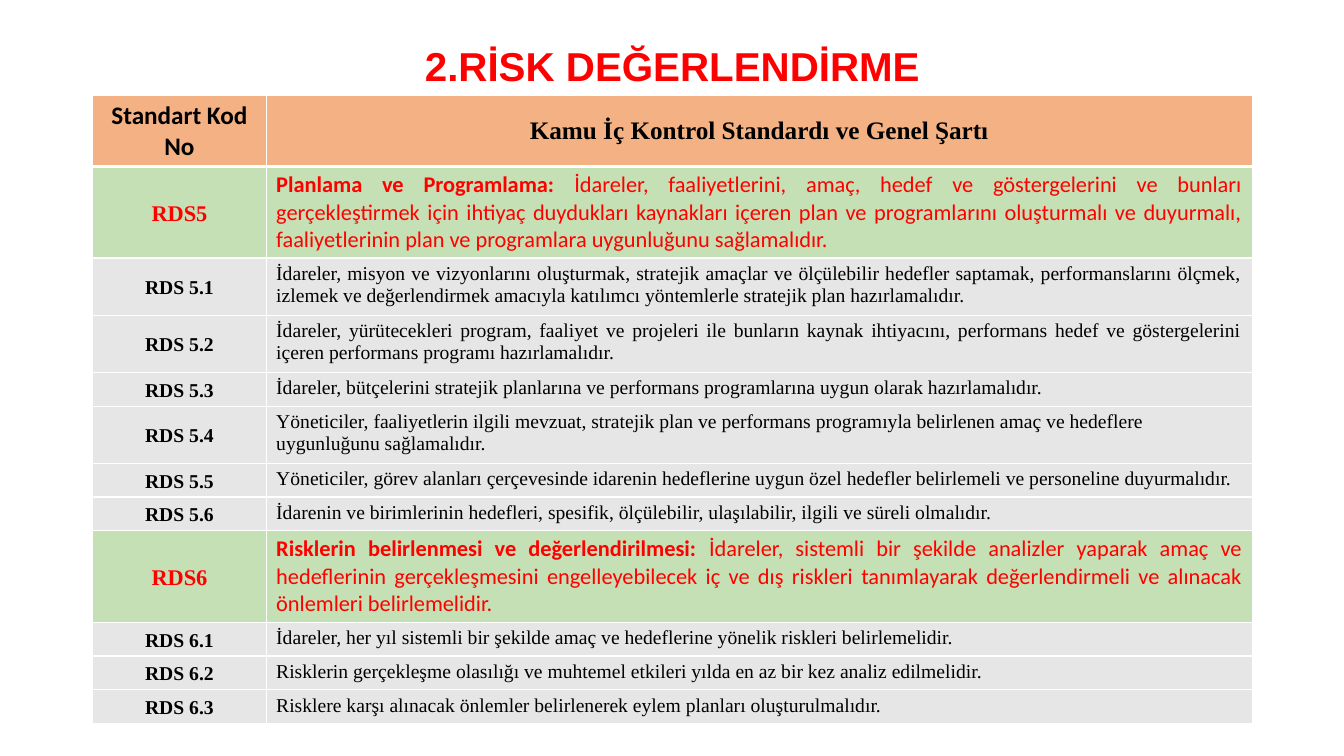
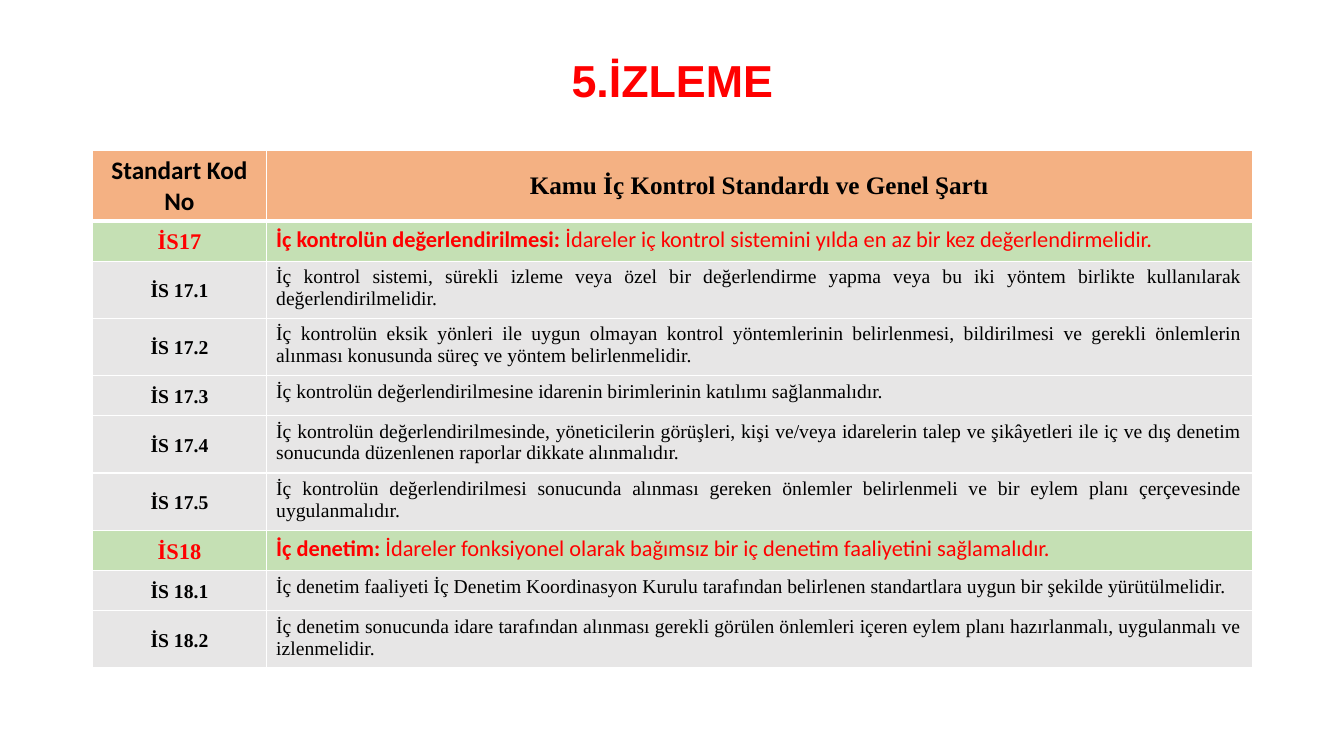
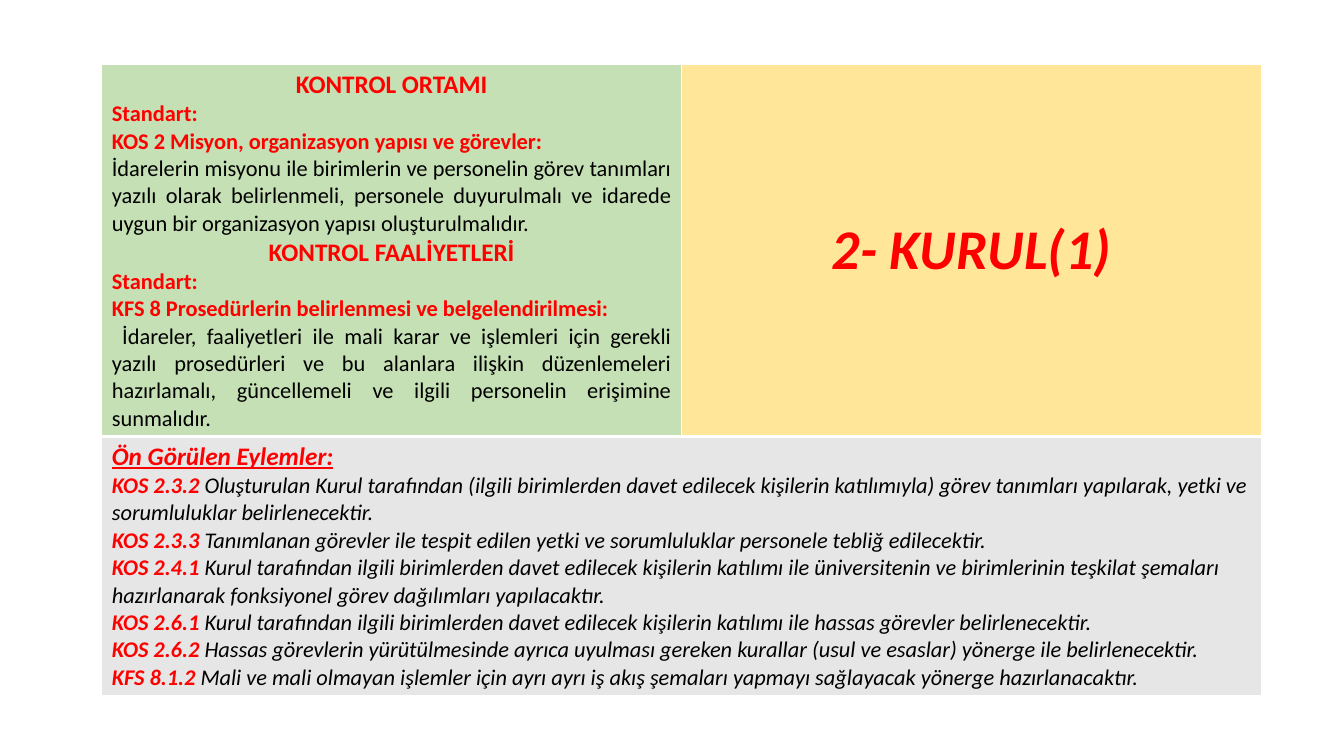
import pptx
import pptx.dml.color
import pptx.enum.text
import pptx.oxml
import pptx.oxml.ns
import pptx.util

Inches = pptx.util.Inches
Pt = pptx.util.Pt
RGBColor = pptx.dml.color.RGBColor
ALIGN = pptx.enum.text.PP_ALIGN
MIDDLE = pptx.enum.text.MSO_ANCHOR.MIDDLE

RED = RGBColor(0xFF, 0x00, 0x00)
BLACK = RGBColor(0x00, 0x00, 0x00)
WHITE = RGBColor(0xFF, 0xFF, 0xFF)
ORANGE = RGBColor(0xF4, 0xB1, 0x83)
GREEN = RGBColor(0xC5, 0xE0, 0xB4)
GREY = RGBColor(0xE7, 0xE6, 0xE6)
YELLOW = RGBColor(0xFF, 0xE6, 0x99)

SERIF = "Times New Roman"
SANS = "Calibri"
LEFT = 0.92
WIDTH = 11.5
CODE_WIDTH = 1.72

# Each row: code, bold lead (standards only), text, number of text lines
RISK_ROWS = [
    ("RDS5", "Planlama ve Programlama: ",
     "İdareler, faaliyetlerini, amaç, hedef ve göstergelerini ve bunları gerçekleştirmek için ihtiyaç "
     "duydukları kaynakları içeren plan ve programlarını oluşturmalı ve duyurmalı, faaliyetlerinin plan "
     "ve programlara uygunluğunu sağlamalıdır.", 3),
    ("RDS 5.1", "",
     "İdareler, misyon ve vizyonlarını oluşturmak, stratejik amaçlar ve ölçülebilir hedefler saptamak, "
     "performanslarını ölçmek, izlemek ve değerlendirmek amacıyla katılımcı yöntemlerle stratejik plan "
     "hazırlamalıdır.", 2),
    ("RDS 5.2", "",
     "İdareler, yürütecekleri program, faaliyet ve projeleri ile bunların kaynak ihtiyacını, performans "
     "hedef ve göstergelerini içeren performans programı hazırlamalıdır.", 2),
    ("RDS 5.3", "",
     "İdareler, bütçelerini stratejik planlarına ve performans programlarına uygun olarak "
     "hazırlamalıdır.", 1),
    ("RDS 5.4", "",
     "Yöneticiler, faaliyetlerin ilgili mevzuat, stratejik plan ve performans programıyla belirlenen "
     "amaç ve hedeflere\nuygunluğunu sağlamalıdır.", 2),
    ("RDS 5.5", "",
     "Yöneticiler, görev alanları çerçevesinde idarenin hedeflerine uygun özel hedefler belirlemeli ve "
     "personeline duyurmalıdır.", 1),
    ("RDS 5.6", "",
     "İdarenin ve birimlerinin hedefleri, spesifik, ölçülebilir, ulaşılabilir, ilgili ve süreli "
     "olmalıdır.", 1),
    ("RDS6", "Risklerin belirlenmesi ve değerlendirilmesi: ",
     "İdareler, sistemli bir şekilde analizler yaparak amaç ve hedeflerinin gerçekleşmesini "
     "engelleyebilecek iç ve dış riskleri tanımlayarak değerlendirmeli ve alınacak önlemleri "
     "belirlemelidir.", 3),
    ("RDS 6.1", "",
     "İdareler, her yıl sistemli bir şekilde amaç ve hedeflerine yönelik riskleri belirlemelidir.", 1),
    ("RDS 6.2", "",
     "Risklerin gerçekleşme olasılığı ve muhtemel etkileri yılda en az bir kez analiz edilmelidir.", 1),
    ("RDS 6.3", "",
     "Risklere karşı alınacak önlemler belirlenerek eylem planları oluşturulmalıdır.", 1),
]

MONITORING_ROWS = [
    ("İS17", "İç kontrolün değerlendirilmesi: ",
     "İdareler iç kontrol sistemini yılda en az bir kez değerlendirmelidir.", 1),
    ("İS 17.1", "",
     "İç kontrol sistemi, sürekli izleme veya özel bir değerlendirme yapma veya bu iki yöntem birlikte "
     "kullanılarak değerlendirilmelidir.", 2),
    ("İS 17.2", "",
     "İç kontrolün eksik yönleri ile uygun olmayan kontrol yöntemlerinin belirlenmesi, bildirilmesi ve "
     "gerekli önlemlerin alınması konusunda süreç ve yöntem belirlenmelidir.", 2),
    ("İS 17.3", "",
     "İç kontrolün değerlendirilmesine idarenin birimlerinin katılımı sağlanmalıdır.", 1),
    ("İS 17.4", "",
     "İç kontrolün değerlendirilmesinde, yöneticilerin görüşleri, kişi ve/veya idarelerin talep ve "
     "şikâyetleri ile iç ve dış denetim sonucunda düzenlenen raporlar dikkate alınmalıdır.", 2),
    ("İS 17.5", "",
     "İç kontrolün değerlendirilmesi sonucunda alınması gereken önlemler belirlenmeli ve bir eylem "
     "planı çerçevesinde uygulanmalıdır.", 2),
    ("İS18", "İç denetim: ",
     "İdareler fonksiyonel olarak bağımsız bir iç denetim faaliyetini sağlamalıdır.", 1),
    ("İS 18.1", "",
     "İç denetim faaliyeti İç Denetim Koordinasyon Kurulu tarafından belirlenen standartlara uygun bir "
     "şekilde yürütülmelidir.", 1),
    ("İS 18.2", "",
     "İç denetim sonucunda idare tarafından alınması gerekli görülen önlemleri içeren eylem planı "
     "hazırlanmalı, uygulanmalı ve izlenmelidir.", 2),
]

BOARD_STANDARDS = [
    ("KONTROL ORTAMI", "KOS 2 Misyon, organizasyon yapısı ve görevler:",
     "İdarelerin misyonu ile birimlerin ve personelin görev tanımları yazılı olarak belirlenmeli, "
     "personele duyurulmalı ve idarede uygun bir organizasyon yapısı oluşturulmalıdır."),
    ("KONTROL FAALİYETLERİ", "KFS 8 Prosedürlerin belirlenmesi ve belgelendirilmesi:",
     " İdareler, faaliyetleri ile mali karar ve işlemleri için gerekli yazılı prosedürleri ve bu "
     "alanlara ilişkin düzenlemeleri hazırlamalı, güncellemeli ve ilgili personelin erişimine "
     "sunmalıdır."),
]

BOARD_ACTIONS = [
    ("KOS 2.3.2 ",
     "Oluşturulan Kurul tarafından (ilgili birimlerden davet edilecek kişilerin katılımıyla) görev "
     "tanımları yapılarak, yetki ve sorumluluklar belirlenecektir."),
    ("KOS 2.3.3 ",
     "Tanımlanan görevler ile tespit edilen yetki ve sorumluluklar personele tebliğ edilecektir."),
    ("KOS 2.4.1 ",
     "Kurul tarafından ilgili birimlerden davet edilecek kişilerin katılımı ile üniversitenin ve "
     "birimlerinin teşkilat şemaları hazırlanarak fonksiyonel görev dağılımları yapılacaktır."),
    ("KOS 2.6.1 ",
     "Kurul tarafından ilgili birimlerden davet edilecek kişilerin katılımı ile hassas görevler "
     "belirlenecektir."),
    ("KOS 2.6.2 ",
     "Hassas görevlerin yürütülmesinde ayrıca uyulması gereken kurallar (usul ve esaslar) yönerge ile "
     "belirlenecektir."),
    ("KFS 8.1.2 ",
     "Mali ve mali olmayan işlemler için ayrı ayrı iş akış şemaları yapmayı sağlayacak yönerge "
     "hazırlanacaktır."),
]


def write(frame, text, size=16, font=SANS, color=BLACK, bold=False, italic=False,
          underline=False, align=ALIGN.LEFT, same_line=False):
    """Add text as a new paragraph, or to the last one, and return the paragraph."""
    paragraph = frame.paragraphs[-1]
    if paragraph.runs and not same_line:
        paragraph = frame.add_paragraph()
    paragraph.alignment = align
    run = paragraph.add_run()
    run.text = text
    run.font.size = Pt(size)
    run.font.name = font
    run.font.color.rgb = color
    run.font.bold = bold
    run.font.italic = italic
    run.font.underline = underline
    return paragraph


def add_title(slide, text, size, height):
    box = slide.shapes.add_textbox(Inches(LEFT), Inches(0.4), Inches(WIDTH), Inches(height))
    frame = box.text_frame
    frame.word_wrap = True
    frame.vertical_anchor = MIDDLE
    title = write(frame, text, size=size, font="Arial", color=RED, bold=True, align=ALIGN.CENTER)
    title.line_spacing = 0.9


def add_grid(slide, left, top, widths, heights):
    table = slide.shapes.add_table(
        len(heights), len(widths), Inches(left), Inches(top),
        Inches(sum(widths)), Inches(sum(heights))).table
    table.first_row = False
    table.horz_banding = False
    for column, width in zip(table.columns, widths):
        column.width = Inches(width)
    for row, height in zip(table.rows, heights):
        row.height = Inches(height)
    return table


def style_cell(cell, fill, bottom=1, top=1):
    """Give a cell white borders (widths in points) and a fill; return its text frame."""
    properties = cell._tc.get_or_add_tcPr()
    for side, width in (("L", 1), ("R", 1), ("T", top), ("B", bottom)):
        properties.append(pptx.oxml.parse_xml(
            f'<a:ln{side} {pptx.oxml.ns.nsdecls("a")} w="{Pt(width)}">'
            f'<a:solidFill><a:srgbClr val="{WHITE}"/></a:solidFill></a:ln{side}>'))
    cell.fill.solid()
    cell.fill.fore_color.rgb = fill
    return cell.text_frame


def fill_code_cell(cell, code, is_standard, fill, top):
    frame = style_cell(cell, fill, top=top)
    cell.vertical_anchor = MIDDLE
    cell.margin_left = cell.margin_right = Inches(0.05)
    cell.margin_top = Inches(0.01)
    cell.margin_bottom = 0
    paragraph = write(frame, code, size=16 if is_standard else 14, font=SERIF,
                      color=RED if is_standard else BLACK, bold=True, align=ALIGN.CENTER)
    paragraph.line_spacing = 1.07
    paragraph.space_after = Pt(8)


def add_standards_table(slide, top, header_height, line_heights, rows):
    """Add a table of codes and conditions; line_heights maps text lines to row height."""
    heights = [header_height] + [line_heights[lines] for *_, lines in rows]
    table = add_grid(slide, LEFT, top, [CODE_WIDTH, WIDTH - CODE_WIDTH], heights)

    headings = (("Standart Kod No", SANS), ("Kamu İç Kontrol Standardı ve Genel Şartı", SERIF))
    for column, (heading, font) in enumerate(headings):
        cell = table.cell(0, column)
        cell.vertical_anchor = MIDDLE
        write(style_cell(cell, ORANGE, bottom=3), heading, size=18, font=font, bold=True,
              align=ALIGN.CENTER)

    for index, (code, lead, text, _) in enumerate(rows, start=1):
        fill = GREEN if lead else GREY
        top_border = 3 if index == 1 else 1
        fill_code_cell(table.cell(index, 0), code, bool(lead), fill, top_border)
        frame = style_cell(table.cell(index, 1), fill, top=top_border)
        if lead:
            write(frame, lead, color=RED, bold=True)
            write(frame, text, color=RED, align=ALIGN.JUSTIFY, same_line=True)
        else:
            for line in text.split("\n"):
                write(frame, line, size=14, font=SERIF, align=ALIGN.JUSTIFY)


def add_board_table(slide):
    table = add_grid(slide, 1.01, 0.64, [WIDTH / 2] * 2, [3.69, 2.57])

    standards = style_cell(table.cell(0, 0), GREEN, bottom=3)
    for component, standard, condition in BOARD_STANDARDS:
        write(standards, component, size=18, color=RED, bold=True, align=ALIGN.CENTER)
        write(standards, "Standart:", color=RED, bold=True)
        write(standards, standard, color=RED, bold=True)
        write(standards, condition, align=ALIGN.JUSTIFY)

    board_cell = table.cell(0, 1)
    board_cell.vertical_anchor = MIDDLE
    write(style_cell(board_cell, YELLOW, bottom=3), "2- KURUL(1)", size=40, color=RED,
          bold=True, italic=True, align=ALIGN.CENTER)

    actions_cell = table.cell(1, 0)
    actions_cell.merge(table.cell(1, 1))
    actions = style_cell(actions_cell, GREY, top=3)
    write(actions, "Ön Görülen Eylemler:", size=18, color=RED, bold=True, italic=True,
          underline=True)
    for code, action in BOARD_ACTIONS:
        write(actions, code, color=RED, bold=True, italic=True)
        write(actions, action, italic=True, same_line=True)


def main():
    deck = pptx.Presentation()
    deck.slide_width = Inches(13.33)
    deck.slide_height = Inches(7.5)
    blank = deck.slide_layouts[6]

    risk = deck.slides.add_slide(blank)
    add_title(risk, "2.RİSK DEĞERLENDİRME", size=28.8, height=0.55)
    add_standards_table(risk, 0.95, 0.7, {1: 0.33, 2: 0.54, 3: 0.91}, RISK_ROWS)

    monitoring = deck.slides.add_slide(blank)
    add_title(monitoring, "5.İZLEME", size=32, height=0.84)
    add_standards_table(monitoring, 1.49, 0.7, {1: 0.4, 2: 0.55}, MONITORING_ROWS)

    add_board_table(deck.slides.add_slide(blank))
    deck.save("out.pptx")


if __name__ == "__main__":
    main()
